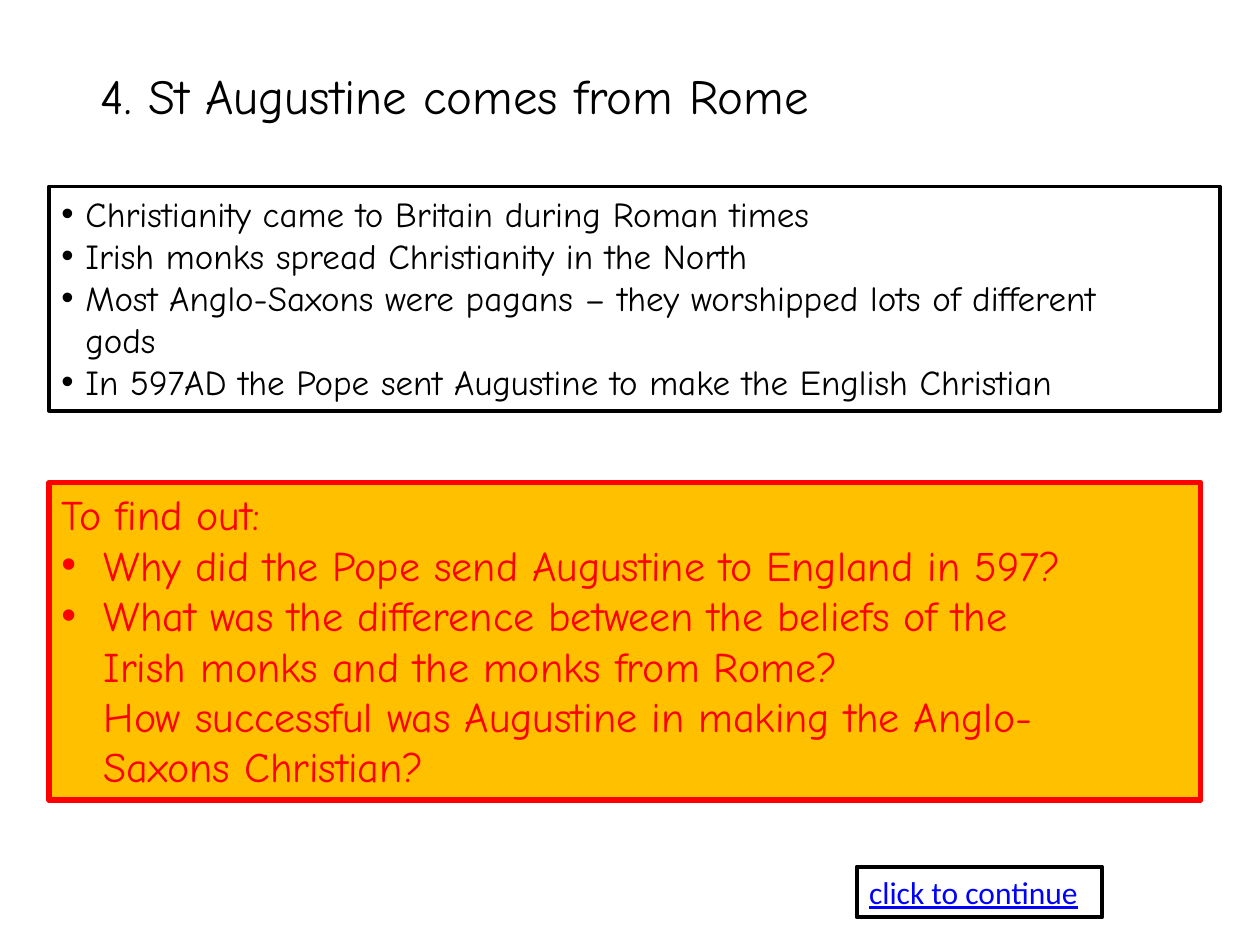
from lxml.etree import SubElement
from pptx import Presentation
from pptx.dml.color import RGBColor
from pptx.enum.shapes import MSO_SHAPE
from pptx.enum.text import MSO_ANCHOR, PP_ALIGN
from pptx.oxml.ns import qn
from pptx.util import Cm, Pt

BLACK, RED, AMBER, LINK_BLUE = "000000", "FF0000", "FFC000", "0000FF"
BULLET = "• "

BACKGROUND_FACTS = [
    "• Christianity came to Britain during Roman times",
    "• Irish monks spread Christianity in the North",
    "• Most Anglo-Saxons were pagans – they worshipped lots of different",
    "gods",
    "• In 597AD the Pope sent Augustine to make the English Christian",
]
ENQUIRY_HEADING = "To find out:"
ENQUIRY_QUESTIONS = [
    "• Why did the Pope send Augustine to England in 597?",
    "• What was the difference between the beliefs of the",
    "Irish monks and the monks from Rome?",
    "How successful was Augustine in making the Anglo-",
    "Saxons Christian?",
]


def rgb(hex_colour):
    return RGBColor.from_string(hex_colour)


def set_indent(paragraph, indent, bulleted):
    """Hang the text at indent, with a bullet in front if asked."""
    properties = paragraph._p.get_or_add_pPr()
    properties.set("marL", str(Cm(indent)))
    if bulleted:
        properties.set("indent", str(-Cm(indent)))
        SubElement(properties, qn("a:buFont"), typeface="Arial")
        SubElement(properties, qn("a:buChar"), char=BULLET.strip())


def write(frame, lines, size, colour=BLACK, font="Comic Neue", indent=0,
          heading=None, underline=None):
    """Fill frame with a flush heading, if any, and indented lines."""
    frame.word_wrap = True
    frame.vertical_anchor = MSO_ANCHOR.TOP
    all_lines = ([heading] if heading else []) + lines
    for index, line in enumerate(all_lines):
        paragraph = frame.paragraphs[0] if index == 0 else frame.add_paragraph()
        paragraph.alignment = PP_ALIGN.LEFT
        if indent and line != heading:
            set_indent(paragraph, indent, line.startswith(BULLET))
        run = paragraph.add_run()
        run.text = line.removeprefix(BULLET)
        run.font.name = font
        run.font.size = Pt(size)
        run.font.color.rgb = rgb(colour)
        run.font.underline = underline


def add_title(slide, left, top, width, height, title):
    title_box = slide.shapes.add_textbox(Cm(left), Cm(top), Cm(width), Cm(height))
    write(title_box.text_frame, [title], size=28)


def add_panel(slide, left, top, width, height, lines, fill=None,
              border=BLACK, border_width=2.25, **text_format):
    panel = slide.shapes.add_shape(
        MSO_SHAPE.RECTANGLE, Cm(left), Cm(top), Cm(width), Cm(height))
    panel.shadow.inherit = False
    if fill:
        panel.fill.solid()
        panel.fill.fore_color.rgb = rgb(fill)
    else:
        panel.fill.background()
    panel.line.color.rgb = rgb(border)
    panel.line.width = Pt(border_width)
    write(panel.text_frame, lines, **text_format)


def main():
    presentation = Presentation()
    presentation.slide_width, presentation.slide_height = Cm(25.4), Cm(19.05)
    slide = presentation.slides.add_slide(presentation.slide_layouts[6])

    add_title(slide, 1.78, 1.19, 16.66, 1.45, "4. St Augustine comes from Rome")
    add_panel(slide, 0.99, 3.76, 23.6, 4.52, BACKGROUND_FACTS,
              size=20, indent=0.48)
    add_panel(slide, 0.99, 9.73, 23.22, 6.4, ENQUIRY_QUESTIONS,
              fill=AMBER, border=RED, border_width=3,
              heading=ENQUIRY_HEADING, size=24, colour=RED, indent=0.85)
    add_panel(slide, 17.27, 17.47, 4.95, 1.02, ["click to continue"],
              size=18, font="Calibri", colour=LINK_BLUE, underline=True)

    presentation.save("out.pptx")


if __name__ == "__main__":
    main()
